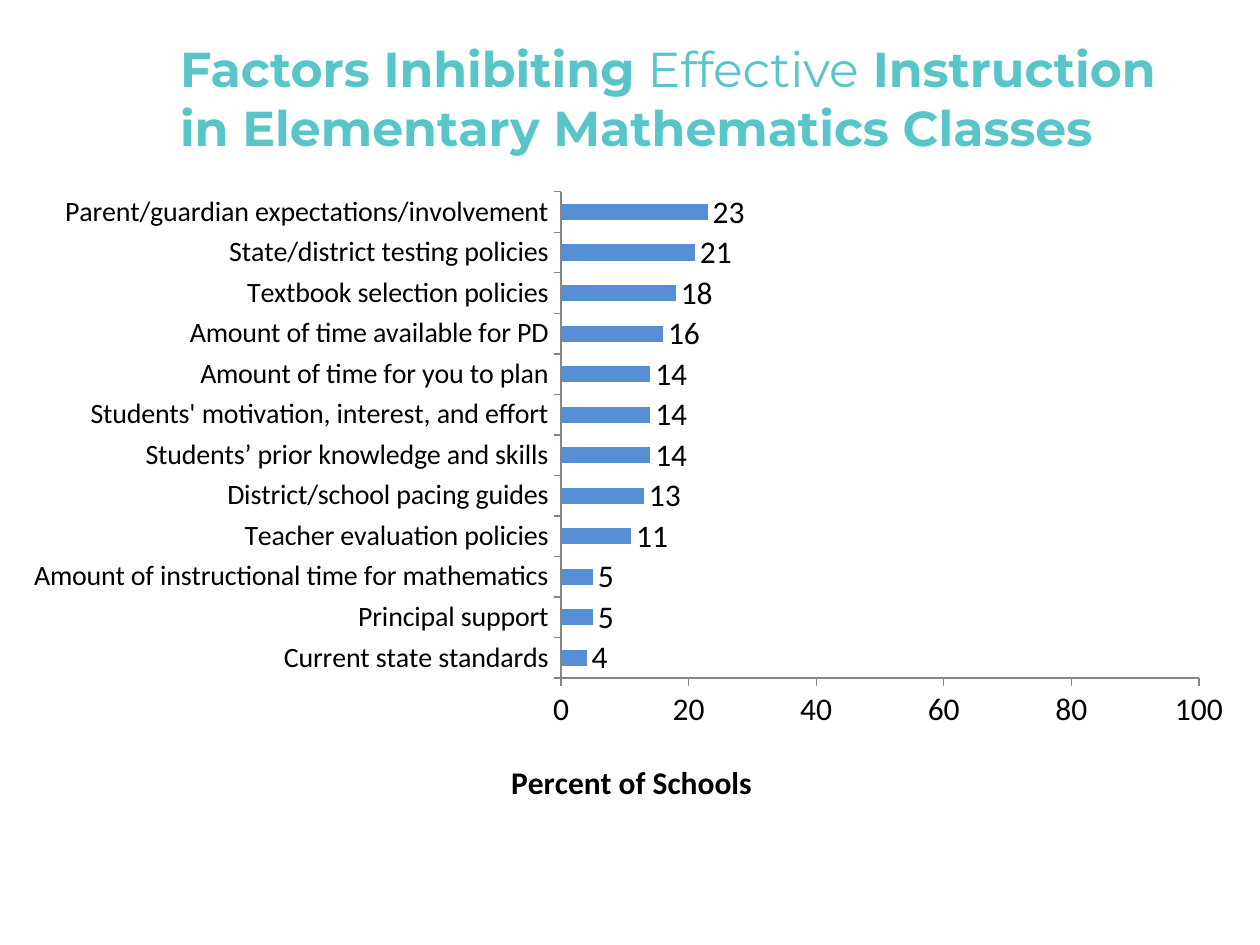
import pptx
import pptx.util
import pptx.chart.data
import pptx.dml.color
import pptx.enum.chart
import pptx.enum.text
import pptx.oxml
import pptx.oxml.ns

Cm = pptx.util.Cm
Pt = pptx.util.Pt

TITLE_RUNS = [
    ("Factors Inhibiting", True),
    (" Effective", False),
    (" Instruction in Elementary Mathematics Classes", True),
]
FACTORS = [
    ("Current state standards", 4),
    ("Principal support", 5),
    ("Amount of instructional time for mathematics", 5),
    ("Teacher evaluation policies", 11),
    ("District/school pacing guides", 13),
    ("Students’ prior knowledge and skills", 14),
    ("Students' motivation, interest, and effort", 14),
    ("Amount of time for you to plan", 14),
    ("Amount of time available for PD", 16),
    ("Textbook selection policies", 18),
    ("State/district testing policies", 21),
    ("Parent/guardian expectations/involvement", 23),
]


def rgb(value):
    return pptx.dml.color.RGBColor.from_string(value)


def set_font(font, name, size, color, bold=False):
    font.name = name
    font.size = Pt(size)
    font.bold = bold
    font.color.rgb = rgb(color)


def add_title(slide):
    sp = slide.shapes.add_textbox(Cm(3.38), Cm(0.76), Cm(20.75), Cm(2.41))
    tf = sp.text_frame
    tf.word_wrap = True
    tf.vertical_anchor = pptx.enum.text.MSO_ANCHOR.MIDDLE
    p = tf.paragraphs[0]
    for text, bold in TITLE_RUNS:
        r = p.add_run()
        r.text = text
        set_font(r.font, "Montserrat", 28, "58C5C9", bold)


def set_layout(parent, index, inner=False, **fractions):
    for old in parent.findall(pptx.oxml.ns.qn("c:layout")):
        parent.remove(old)
    target = '<c:layoutTarget val="inner"/>' if inner else ""
    modes = "".join(f'<c:{k}Mode val="edge"/>' for k in "xy")
    sizes = "".join(f'<c:{k} val="{v}"/>' for k, v in fractions.items())
    layout = pptx.oxml.parse_xml(
        f'<c:layout {pptx.oxml.ns.nsdecls("c")}><c:manualLayout>'
        f"{target}{modes}{sizes}</c:manualLayout></c:layout>"
    )
    parent.insert(index, layout)


def style_axis(axis, size):
    axis.has_major_gridlines = False
    axis.major_tick_mark = pptx.enum.chart.XL_TICK_MARK.OUTSIDE
    axis.minor_tick_mark = pptx.enum.chart.XL_TICK_MARK.NONE
    axis.format.line.color.rgb = rgb("868686")
    axis.format.line.width = Pt(0.75)
    set_font(axis.tick_labels.font, "Calibri", size, "000000")


def style_value_axis(axis):
    style_axis(axis, 18)
    axis.minimum_scale = 0
    axis.maximum_scale = 100
    axis.major_unit = 20
    p = axis.axis_title.text_frame.paragraphs[0]
    r = p.add_run()
    r.text = "Percent of Schools"
    set_font(r.font, "Calibri", 18, "000000", True)
    set_layout(axis.axis_title._element, 1, x=0.4, y=0.9)


def style_bars(plot):
    plot.gap_width = 150
    plot.vary_by_categories = False
    fill = plot.series[0].format.fill
    fill.solid()
    fill.fore_color.rgb = rgb("558ED5")
    labels = plot.series[0].data_labels
    labels.show_value = True
    labels.position = pptx.enum.chart.XL_LABEL_POSITION.OUTSIDE_END
    set_font(labels.font, "Calibri", 18, "000000")


def add_factor_chart(slide):
    data = pptx.chart.data.CategoryChartData()
    data.categories = [name for name, _ in FACTORS]
    data.add_series("Series 1", [value for _, value in FACTORS])
    chart = slide.shapes.add_chart(
        pptx.enum.chart.XL_CHART_TYPE.BAR_CLUSTERED,
        Cm(0.2), Cm(3.61), Cm(24.97), Cm(12.9), data,
    ).chart
    chart.has_legend = False
    chart.has_title = False
    set_font(chart.font, "Calibri", 18, "000000")
    style_axis(chart.category_axis, 16)
    style_value_axis(chart.value_axis)
    style_bars(chart.plots[0])
    plot_area = chart._chartSpace.chart.plotArea
    set_layout(plot_area, 0, inner=True, x=0.445, y=0.02, w=0.515, h=0.76)


def main():
    """Build the slide on inhibiting factors and save it."""
    prs = pptx.Presentation()
    prs.slide_width = Cm(25.4)
    prs.slide_height = Cm(19.05)
    slide = prs.slides.add_slide(prs.slide_layouts[6])
    add_title(slide)
    add_factor_chart(slide)
    prs.save("out.pptx")


if __name__ == "__main__":
    main()
